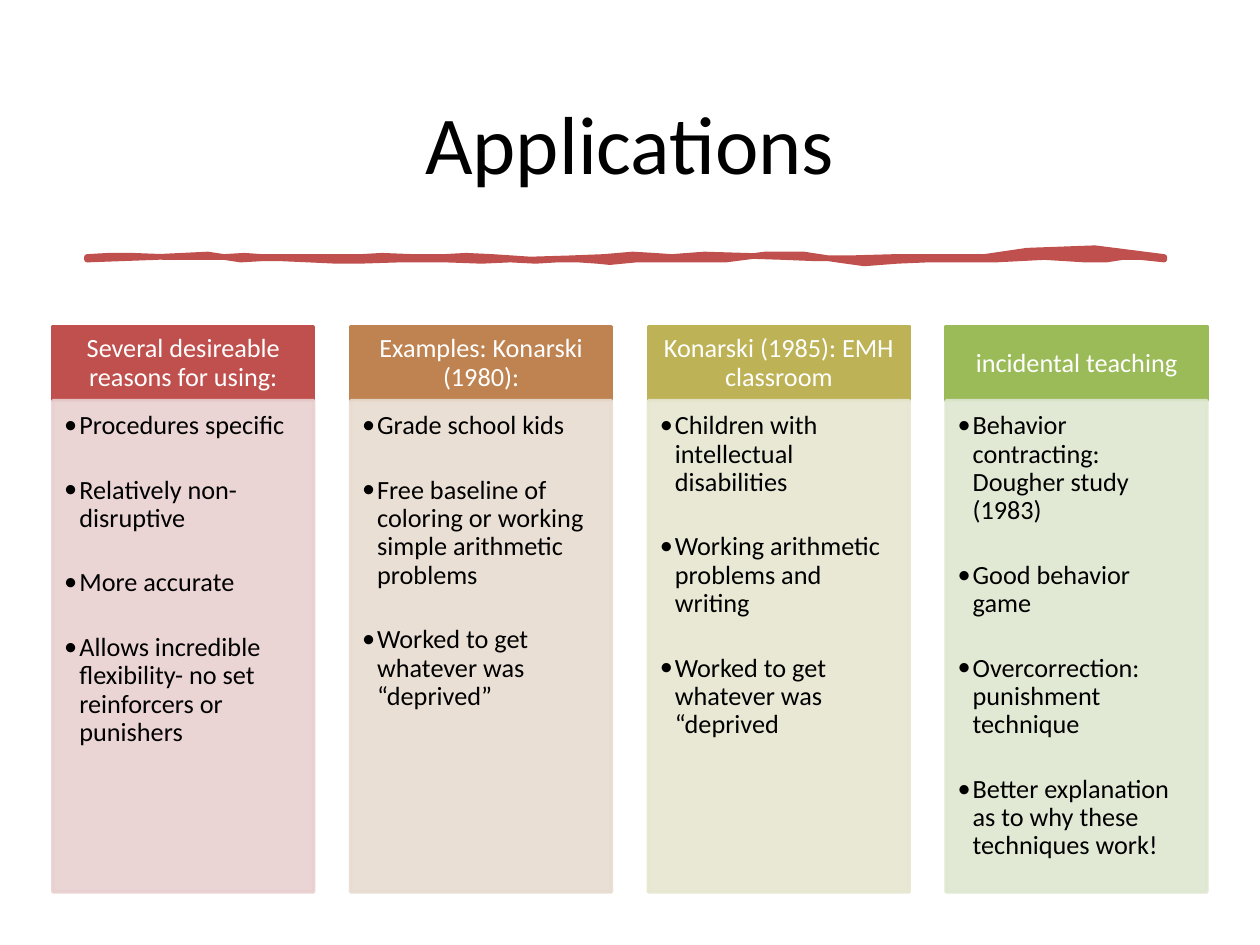
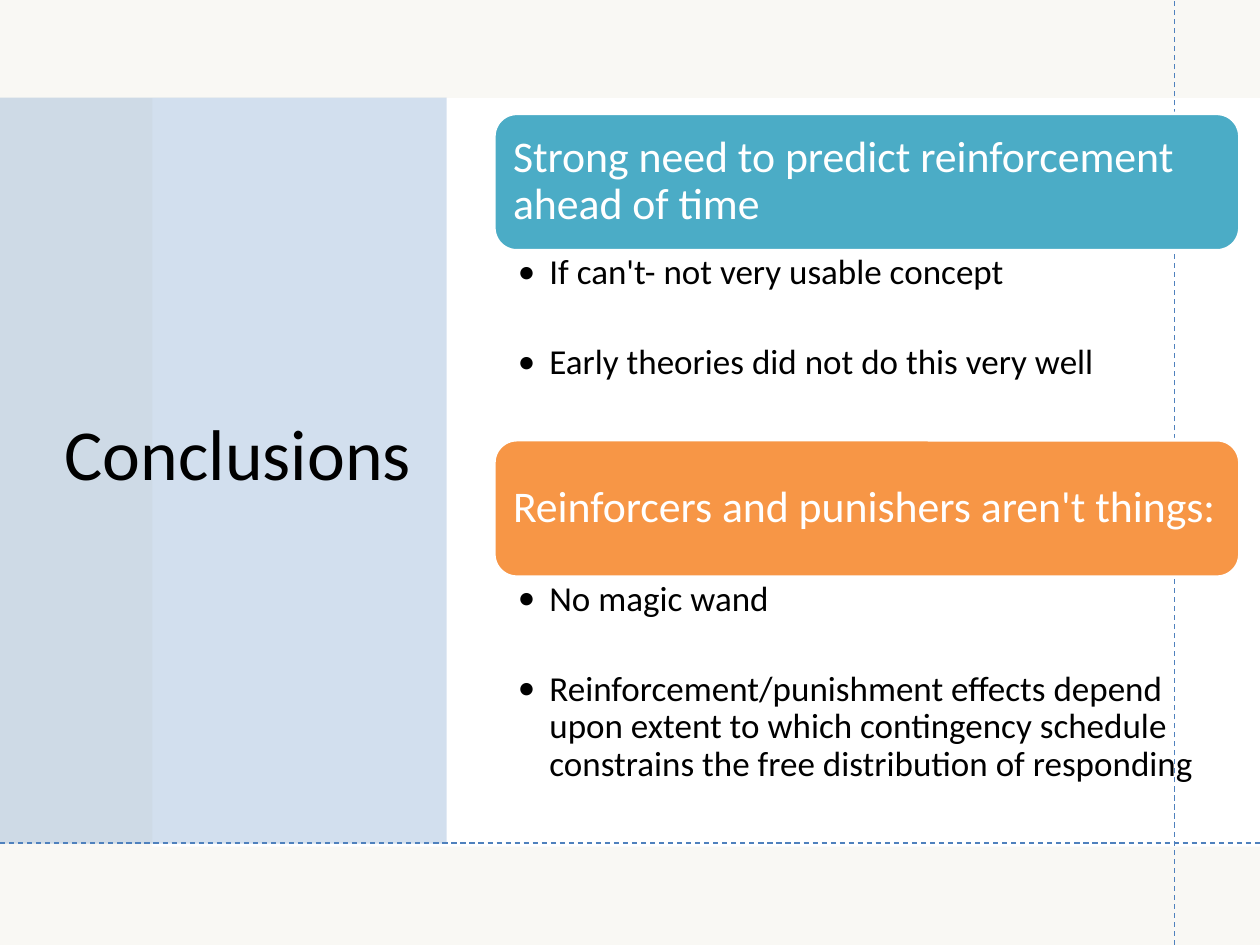
from dataclasses import dataclass
from lxml.etree import SubElement as Sub
from pptx import Presentation
from pptx.dml.color import RGBColor as Rgb
from pptx.enum.dml import MSO_LINE as Dash
from pptx.enum.shapes import MSO_CONNECTOR as Conn, MSO_SHAPE as Kind
from pptx.enum.text import MSO_ANCHOR as Anchor, MSO_AUTO_SIZE as Fit, PP_ALIGN as Align
from pptx.oxml.ns import qn
from pptx.util import Inches, Pt


@dataclass
class Theme:
    font: str = "Calibri"
    ink: str = "000000"
    white: str = "FFFFFF"
    paper: str = "F9F8F4"
    sand: str = "EEECE1"
    blue: str = "4F81BD"
    red: str = "C0504D"
    teal: str = "4BACC6"
    orange: str = "F79646"
    head: int = 15
    body: int = 15
    card: int = 25
    point: int = 20


theme = Theme()


def box(slide, at, fill=None, line=None, kind=Kind.RECTANGLE, alpha=100):
    """Add a shape with flat fill and line; without a fill, a text box."""
    place = [Inches(n) for n in at]
    if fill is None:
        return slide.shapes.add_textbox(*place)
    shape = slide.shapes.add_shape(kind, *place)
    shape.shadow.inherit = False
    shape.fill.solid()
    shape.fill.fore_color.rgb = Rgb.from_string(fill)
    if line:
        shape.line.color.rgb = Rgb.from_string(line)
        shape.line.width = Pt(2)
    else:
        shape.line.fill.background()
    if alpha < 100:
        for tint in shape.element.spPr.iter(qn("a:srgbClr")):
            Sub(tint, qn("a:alpha"), val=str(alpha * 1000))
    return shape


def write(shape, lines, size, color, pad, align=Align.LEFT,
          anchor=Anchor.MIDDLE, space=0.9, bullet=0, gap=0):
    """Fill a shape with paragraphs; bullet is the hanging indent in inches."""
    frame = shape.text_frame
    frame.text = "\n".join(lines)
    frame.word_wrap = True
    frame.auto_size = Fit.NONE
    frame.vertical_anchor = anchor
    (frame.margin_left, frame.margin_top,
     frame.margin_right, frame.margin_bottom) = [Inches(n) for n in pad]
    for par in frame.paragraphs:
        par.alignment = align
        par.line_spacing = space
        par.space_before = Pt(0)
        par.space_after = Pt(gap)
        if bullet:
            par.level = 1
            props = par._p.get_or_add_pPr()
            props.set("marL", str(Inches(bullet)))
            props.set("indent", str(-Inches(bullet)))
            Sub(props, qn("a:buFont"), typeface=theme.font)
            Sub(props, qn("a:buChar"), char="•")
        for run in par.runs:
            run.font.name = theme.font
            run.font.size = Pt(size)
            run.font.color.rgb = Rgb.from_string(color)


deck = Presentation()
deck.slide_width, deck.slide_height = Inches(10), Inches(7.5)

# Titles of both slides
slides = []
for name, at, size in [("Applications", (0.69, 0.4, 8.62, 1.45), 47),
                       ("Conclusions", (0.41, 0.74, 2.96, 5.69), 41)]:
    slide = deck.slides.add_slide(deck.slide_layouts[5])
    title = slide.shapes.title
    title.left, title.top, title.width, title.height = [Inches(n) for n in at]
    write(title, [name], size, theme.ink, (0.1, 0.05, 0.1, 0.05), Align.CENTER, space=1.0)
    slides.append(slide)
first, last = slides

# Slide 1: brush stroke, as curve points in hundredths of an inch
curve = [
    (69, 204), (86, 203), (100, 203), (131, 204), (163, 203), (159, 204), (177, 204),
    (194, 202), (210, 205), (221, 204), (233, 203), (252, 205), (265, 204),
    (290, 205), (297, 202), (328, 204), (358, 204), (365, 202), (391, 204),
    (417, 208), (458, 204), (479, 204), (507, 198), (518, 205), (533, 204),
    (551, 200), (598, 203), (622, 204), (650, 205), (666, 206), (710, 204),
    (753, 206), (766, 202), (781, 204), (799, 199), (875, 190), (924, 204),
    (924, 205), (924, 205), (924, 206), (902, 204), (892, 203), (878, 206),
    (870, 209), (830, 201), (790, 206), (753, 208), (756, 204), (736, 206),
    (714, 206), (682, 212), (664, 206), (642, 201), (606, 200), (576, 206),
    (545, 205), (539, 206), (505, 206), (472, 209), (482, 207), (459, 206),
    (440, 205), (428, 209), (405, 206), (383, 209), (361, 205), (317, 206),
    (273, 207), (275, 207), (245, 206), (216, 205), (213, 205), (191, 206),
    (172, 197), (131, 207), (69, 206), (69, 206), (69, 205), (69, 204)]
steps = 3
dots = []
for i in range(0, len(curve) - 1, 3):
    for k in range(1, steps + 1):
        t = k / steps
        parts = ((1 - t) ** 3, 3 * t * (1 - t) ** 2, 3 * t * t * (1 - t), t ** 3)
        dots.append([sum(w * dot[axis] for w, dot in zip(parts, curve[i:i + 4]))
                     for axis in (0, 1)])
pen = first.shapes.build_freeform(*curve[0], scale=Inches(0.01))
pen.add_line_segments(dots, close=True)
stroke = pen.convert_to_shape()
stroke.shadow.inherit = False
stroke.fill.solid()
stroke.fill.fore_color.rgb = Rgb.from_string(theme.red)
stroke.line.color.rgb = Rgb.from_string(theme.red)
stroke.line.width = Pt(3.25)

# Slide 1: four columns of heading and points
columns = [
    ("Several desireable reasons for using:", theme.red, "E8D0D0",
     ["Procedures specific", "Relatively non-disruptive", "More accurate",
      "Allows incredible flexibility- no set reinforcers or punishers"]),
    ("Examples: Konarski (1980):", "BE8351", "E8DCD0",
     ["Grade school kids",
      "Free baseline of coloring or working simple arithmetic problems",
      "Worked to get whatever was “deprived”"]),
    ("Konarski (1985): EMH classroom", "BDB255", "E7E6D1",
     ["Children with intellectual disabilities",
      "Working arithmetic problems and writing",
      "Worked to get whatever was “deprived"]),
    ("incidental teaching", "9BBB59", "DEE7D1",
     ["Behavior contracting: Dougher study (1983)", "Good behavior game",
      "Overcorrection: punishment technique",
      "Better explanation as to why these techniques work!"]),
]
for i, (head, dark, pale, points) in enumerate(columns):
    x = 0.42 + i * 7.09 / 3
    top = box(first, (x, 2.59, 2.07, 0.59), dark, dark)
    write(top, [head], theme.head, theme.white, (0.12, 0.07, 0.12, 0.07), Align.CENTER)
    body = box(first, (x, 3.18, 2.07, 3.9), pale, pale, alpha=90)
    write(body, points, theme.body, theme.ink, (0.09, 0.09, 0.12, 0.13),
          anchor=Anchor.TOP, bullet=0.12, gap=20.6)

# Slide 2: backdrop, white panel and turned blue band, with the title in front
last.background.fill.solid()
last.background.fill.fore_color.rgb = Rgb.from_string(theme.paper)
full = (0, 0, 10, 7.5)
box(last, full, theme.white)
box(last, full, theme.sand, alpha=35)
box(last, (1.21, 0.78, 8.79, 5.94), theme.white)
band = box(last, (-1.19, 1.96, 5.92, 3.55), theme.blue, alpha=25)
band.rotation = 270
label = last.shapes.title.element
label.getparent().append(label)

# Slide 2: dashed guides
for ends in [(9.32, 7.5, 9.32, 0), (0, 6.69, 10, 6.69)]:
    guide = last.shapes.add_connector(Conn.STRAIGHT, *[Inches(n) for n in ends])
    guide.line.color.rgb = Rgb.from_string(theme.blue)
    guide.line.width = Pt(0.75)
    guide.line.dash_style = Dash.DASH
    Sub(guide.element.spPr, qn("a:effectLst"))

# Slide 2: cards, each with its points below
cards = [
    ("Strong need to predict reinforcement ahead of time", theme.teal, 0.9, 1.5,
     ["If can't- not very usable concept", "Early theories did not do this very well"]),
    ("Reinforcers and punishers aren't things:", theme.orange, 3.49, 2.05,
     ["No magic wand",
      "Reinforcement/punishment effects depend upon extent to which contingency "
      "schedule constrains the free distribution of responding"]),
]
for head, color, y, tall, points in cards:
    card = box(last, (3.92, y, 5.92, 1.09), color, theme.white, Kind.ROUNDED_RECTANGLE)
    write(card, [head], theme.card, theme.white, (0.1, 0.1, 0.1, 0.1))
    notes = box(last, (3.92, y + 1.09, 5.92, tall))
    write(notes, points, theme.point, theme.ink, (0.19, 0.03, 0.19, 0.03),
          anchor=Anchor.TOP, bullet=0.25, gap=29.8)

deck.save("out.pptx")
